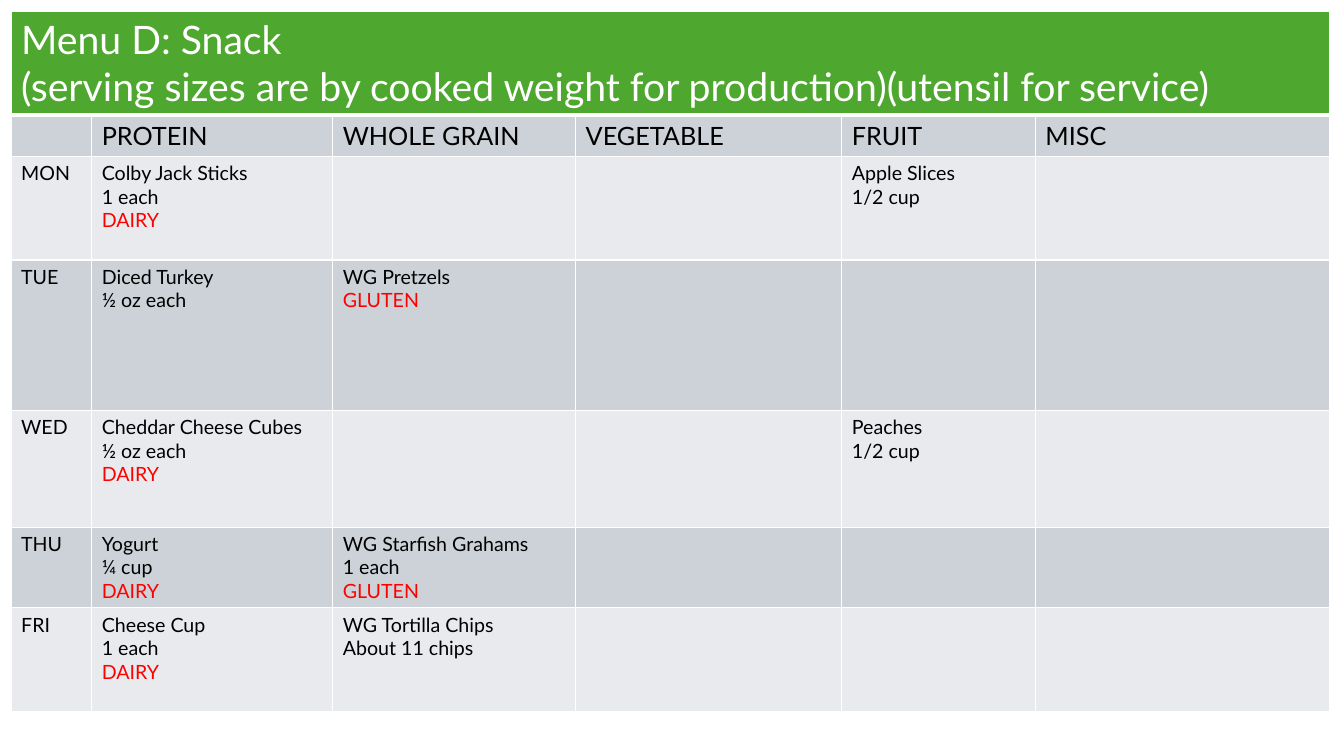
from lxml.etree import SubElement
from pptx import Presentation
from pptx.dml.color import RGBColor
from pptx.oxml.ns import qn
from pptx.util import Inches, Pt

WHITE = RGBColor(0xFF, 0xFF, 0xFF)
BLACK = RGBColor(0x00, 0x00, 0x00)
RED = RGBColor(0xFF, 0x00, 0x00)
GREEN = RGBColor(0x4E, 0xA7, 0x2E)
DARK_BAND = RGBColor(0xCC, 0xD2, 0xD8)
LIGHT_BAND = RGBColor(0xE8, 0xEA, 0xED)

FONT = "Lato"
ALLERGENS = {"DAIRY", "GLUTEN"}
MARGIN = 0.11
COLUMN_WIDTHS = [0.8, 2.39, 2.41, 2.64, 1.92, 2.92]
ROW_HEIGHTS = [1.03, 0.4, 1.03, 1.49, 1.16, 0.8, 1.03]

TITLE = "Menu D: Snack\n(serving sizes are by cooked weight for production)(utensil for service)"
MENU = [
    [TITLE, "", "", "", "", ""],
    ["", "PROTEIN", "WHOLE GRAIN", "VEGETABLE", "FRUIT", "MISC"],
    ["MON", "Colby Jack Sticks\n1 each\nDAIRY", "", "", "Apple Slices\n1/2 cup", ""],
    ["TUE", "Diced Turkey\n½ oz each", "WG Pretzels\nGLUTEN", "", "", ""],
    ["WED", "Cheddar Cheese Cubes\n½ oz each\nDAIRY", "", "", "Peaches\n1/2 cup", ""],
    ["THU", "Yogurt\n¼ cup\nDAIRY", "WG Starfish Grahams\n1 each\nGLUTEN", "", "", ""],
    ["FRI", "Cheese Cup\n1 each\nDAIRY", "WG Tortilla Chips\nAbout 11 chips", "", "", ""],
]


def add_borders(cell, bottom_width):
    properties = cell._tc.get_or_add_tcPr()
    for side, width in (("L", 1), ("R", 1), ("T", 1), ("B", bottom_width)):
        line = SubElement(properties, qn(f"a:ln{side}"), w=str(Pt(width)))
        fill = SubElement(line, qn("a:solidFill"))
        SubElement(fill, qn("a:srgbClr"), val=str(WHITE))


def write_cell(cell, text, size, color):
    cell.text = text
    for para in cell.text_frame.paragraphs:
        para.font.name = FONT
        para.font.size = Pt(size)
        para.font.color.rgb = RED if para.text in ALLERGENS else color


# Slide
deck = Presentation()
deck.slide_width = Inches(13.33)
deck.slide_height = Inches(7.5)
page = deck.slides.add_slide(deck.slide_layouts[6])

# Table grid
table = page.shapes.add_table(
    len(ROW_HEIGHTS), len(COLUMN_WIDTHS), Inches(MARGIN), Inches(MARGIN),
    Inches(sum(COLUMN_WIDTHS)), Inches(sum(ROW_HEIGHTS)),
).table
table.first_row = False
table.horz_banding = False
for column, width in zip(table.columns, COLUMN_WIDTHS):
    column.width = Inches(width)
for row, height in zip(table.rows, ROW_HEIGHTS):
    row.height = Inches(height)
table.cell(0, 0).merge(table.cell(0, len(COLUMN_WIDTHS) - 1))

# Title row, heading row, then one banded row per weekday
for row_number, texts in enumerate(MENU):
    is_title = row_number == 0
    size = {0: 28, 1: 18}.get(row_number, 14)
    band = GREEN if is_title else DARK_BAND if row_number % 2 else LIGHT_BAND
    for column_number, text in enumerate(texts):
        cell = table.cell(row_number, column_number)
        add_borders(cell, 3 if is_title else 1)
        cell.fill.solid()
        cell.fill.fore_color.rgb = band
        if text:
            write_cell(cell, text, size, WHITE if is_title else BLACK)

deck.save("out.pptx")
